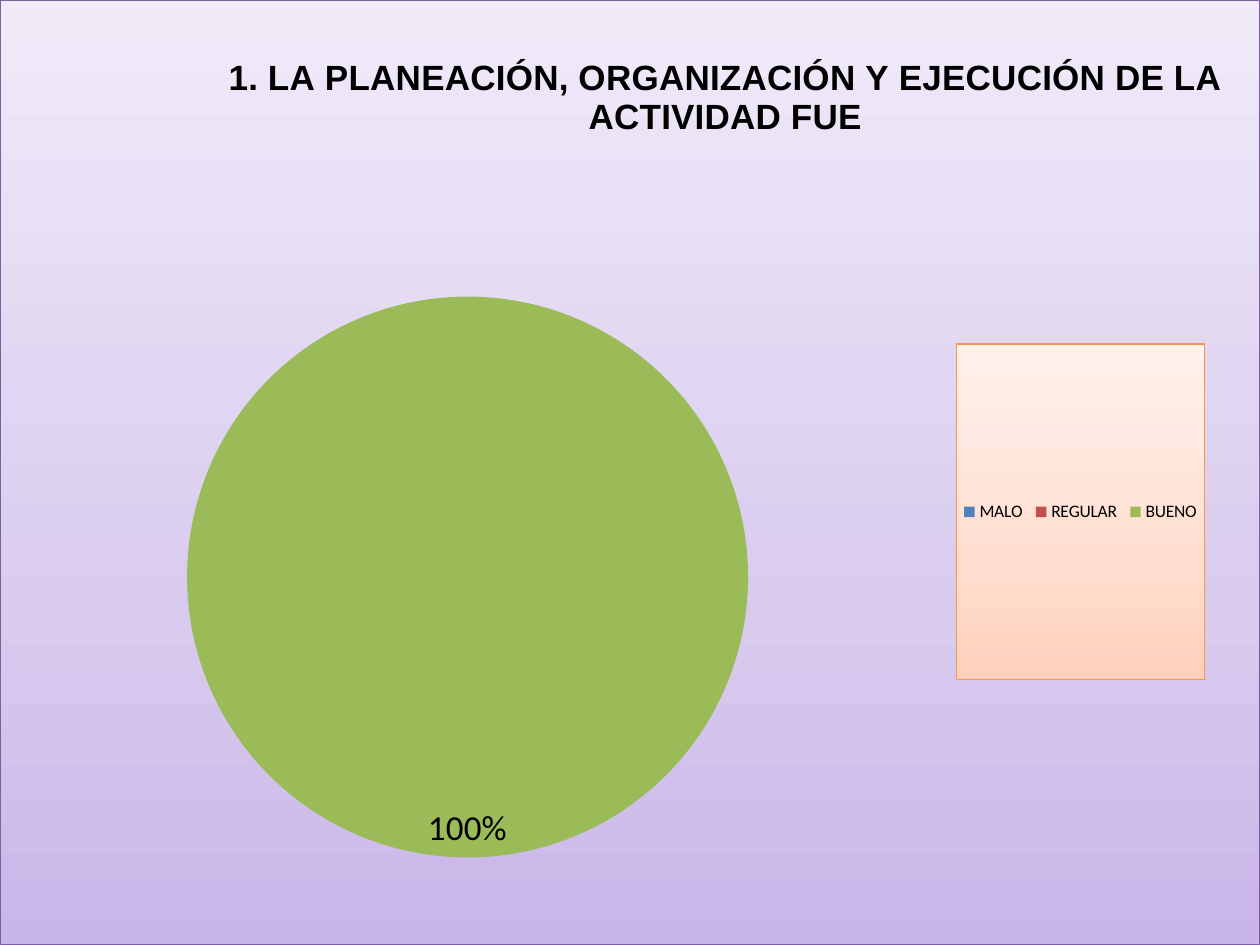
import pptx
import pptx.chart.data
import pptx.dml.color
import pptx.enum.chart
import pptx.oxml
import pptx.oxml.ns
import pptx.util
from dataclasses import dataclass

PX_PER_INCH = 126
WIDTH, HEIGHT = 1260, 945
qn = pptx.oxml.ns.qn


def px(length):
    return round(length * 914400 / PX_PER_INCH)


@dataclass(frozen=True)
class Theme:
    ink: str = "000000"
    ratings: tuple = ("4F81BD", "C0504D", "9BBB59")
    backdrop: tuple = ((0, "C9B5E8"), (35, "D8CBEE"), (100, "F0EAF9"))
    backdrop_edge: str = "7D60A0"
    key: tuple = ((0, "FFD0BA"), (35, "FFDED0"), (100, "FFF1EB"))
    key_edge: str = "F79646"
    body_font: str = "Calibri"
    heading_font: str = "Arial"
    body_size: int = 10
    heading_size: int = 20
    edge_width: float = 0.75


def element(xml):
    return pptx.oxml.parse_xml(xml.replace(
        " NS", " " + pptx.oxml.ns.nsdecls("c", "a"), 1))


class SurveySlide:
    def __init__(self, slide, theme):
        self.slide = slide
        self.theme = theme

    def style_font(self, font, size, family, bold=False):
        font.size = pptx.util.Pt(size)
        font.name = family
        font.bold = bold
        font.color.rgb = pptx.dml.color.RGBColor.from_string(self.theme.ink)

    def gradient_panel(self, stops, edge):
        colours = "".join(
            f'<a:gs pos="{position * 1000}"><a:srgbClr val="{colour}"/></a:gs>'
            for position, colour in stops)
        return element(
            f'<c:spPr NS><a:gradFill rotWithShape="1"><a:gsLst>{colours}</a:gsLst>'
            f'<a:lin ang="16200000" scaled="1"/></a:gradFill>'
            f'<a:ln w="{pptx.util.Pt(self.theme.edge_width)}"><a:solidFill>'
            f'<a:srgbClr val="{edge}"/></a:solidFill></a:ln></c:spPr>')

    def place(self, region, left, top, width=None, height=None, inner=False):
        for old in region.findall(qn("c:layout")):
            region.remove(old)
        target = '<c:layoutTarget val="inner"/>' if inner else ""
        modes = '<c:xMode val="edge"/><c:yMode val="edge"/>'
        shares = (("x", left, WIDTH), ("y", top, HEIGHT),
                  ("w", width, WIDTH), ("h", height, HEIGHT))
        values = "".join(f'<c:{name} val="{length / whole:.4f}"/>'
                         for name, length, whole in shares if length is not None)
        layout = element(f"<c:layout NS><c:manualLayout>{target}{modes}{values}"
                         "</c:manualLayout></c:layout>")
        overlay = region.find(qn("c:overlay"))
        if overlay is None:
            region.insert(0, layout)
        else:
            overlay.addprevious(layout)

    def pie(self, categories, values):
        theme = self.theme
        answers = pptx.chart.data.CategoryChartData()
        answers.categories = categories
        answers.add_series("Series 1", values)
        chart = self.slide.shapes.add_chart(
            pptx.enum.chart.XL_CHART_TYPE.PIE, 0, 0,
            px(WIDTH), px(HEIGHT), answers).chart
        self.style_font(chart.font, theme.body_size, theme.body_font)
        chart.plots[0].vary_by_categories = True
        chart_body = chart.element.find(qn("c:chart"))
        chart_body.addnext(
            self.gradient_panel(theme.backdrop, theme.backdrop_edge))
        plot_area = chart_body.find(qn("c:plotArea"))
        self.place(plot_area, 20, 156, 895, 702, inner=True)
        ratings = chart.plots[0].series[0]
        for index, colour in enumerate(theme.ratings):
            fill = ratings.points[index].format.fill
            fill.solid()
            fill.fore_color.rgb = pptx.dml.color.RGBColor.from_string(colour)
        ratings_xml = plot_area.find(".//" + qn("c:ser"))
        ratings_xml.find(qn("c:dPt")).addprevious(
            element('<c:explosion NS val="25"/>'))
        self.percent_labels(ratings, ratings_xml, values)
        return chart

    def percent_labels(self, ratings, ratings_xml, values):
        labels = ratings.data_labels
        labels.show_percentage = True
        labels.show_value = False
        labels.show_legend_key = False
        labels.number_format = "0%"
        labels.number_format_is_linked = False
        labels.position = pptx.enum.chart.XL_LABEL_POSITION.INSIDE_END
        self.style_font(labels.font, self.theme.heading_size, self.theme.body_font)
        empty = [index for index, value in enumerate(values) if value == 0]
        for order, index in enumerate(empty):
            ratings_xml.find(qn("c:dLbls")).insert(order, element(
                f'<c:dLbl NS><c:idx val="{index}"/><c:delete val="1"/></c:dLbl>'))

    def heading(self, chart, text):
        chart.has_title = True
        frame = chart.chart_title.text_frame
        frame.text = text
        self.style_font(frame.paragraphs[0].runs[0].font,
                        self.theme.heading_size, self.theme.heading_font, True)
        self.place(chart.element.find(".//" + qn("c:title")), 222, 48)

    def key(self, chart):
        chart.has_legend = True
        chart.legend.position = pptx.enum.chart.XL_LEGEND_POSITION.RIGHT
        chart.legend.include_in_layout = False
        self.style_font(chart.legend.font, self.theme.body_size, self.theme.body_font)
        legend = chart.element.find(".//" + qn("c:legend"))
        self.place(legend, 957, 344, 248, 336)
        legend.find(qn("c:overlay")).addnext(
            self.gradient_panel(self.theme.key, self.theme.key_edge))


def main():
    deck = pptx.Presentation()
    deck.slide_width, deck.slide_height = px(WIDTH), px(HEIGHT)
    survey = SurveySlide(deck.slides.add_slide(deck.slide_layouts[6]), Theme())
    planning = survey.pie(("MALO", "REGULAR", "BUENO"), (0, 0, 100))
    survey.heading(planning,
                   "1. LA PLANEACIÓN, ORGANIZACIÓN Y EJECUCIÓN DE LA ACTIVIDAD FUE")
    survey.key(planning)
    deck.save("out.pptx")


if __name__ == "__main__":
    main()
